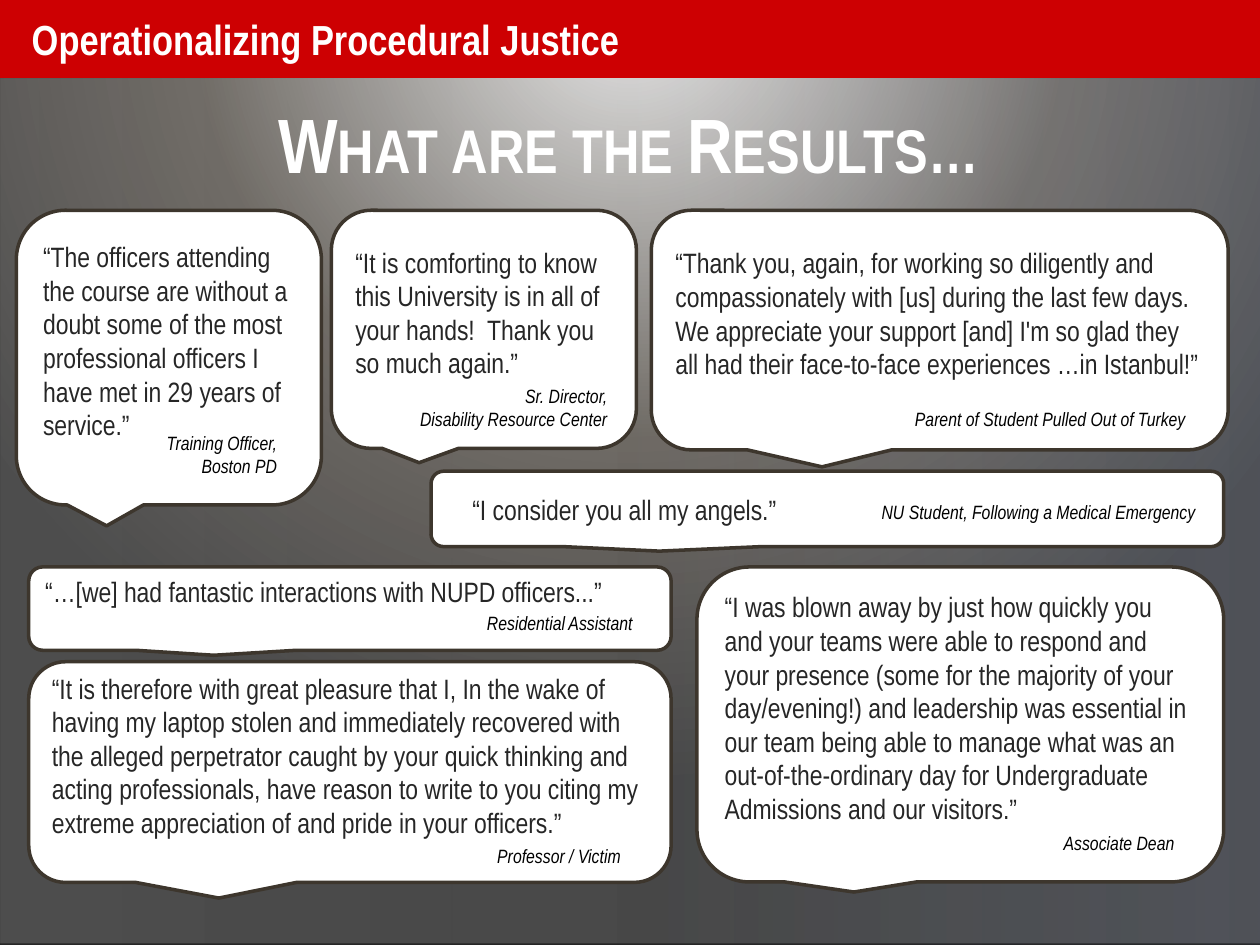
from lxml import etree
from pptx import Presentation
from pptx.dml.color import RGBColor
from pptx.enum.shapes import MSO_SHAPE
from pptx.enum.text import MSO_ANCHOR, MSO_AUTO_SIZE, PP_ALIGN
from pptx.oxml import parse_xml
from pptx.util import Cm, Pt

RECT, CALLOUT = MSO_SHAPE.RECTANGLE, MSO_SHAPE.ROUNDED_RECTANGULAR_CALLOUT
MIDDLE, TOP = MSO_ANCHOR.MIDDLE, MSO_ANCHOR.TOP
LEFT, CENTER, RIGHT = PP_ALIGN.LEFT, PP_ALIGN.CENTER, PP_ALIGN.RIGHT
FIT_SHAPE = MSO_AUTO_SIZE.SHAPE_TO_FIT_TEXT
A = "http://schemas.openxmlformats.org/drawingml/2006/main"
P = "http://schemas.openxmlformats.org/presentationml/2006/main"

FONT = "Arial Narrow"
WHITE, BLACK, RED = "FFFFFF", "000000", "CD0002"
BROWN, DARK = "3D362D", "262626"
SLIDE_W, SLIDE_H, HEADER_H = 25.4, 19.05, 1.57

# Callout tails, as offsets of the tip from the centre
LONG_TAIL = (-0.204, 0.571, 0.167)
MID_TAIL = (-0.212, 0.56, 0.167)
SHORT_TAIL = (-0.202, 0.532, 0.167)
ONE_LINE, TWO_LINES = 0.74, 1.19
RAISED = {"margin_bottom": Cm(0.81)}  # leaves one line free below the quote

# Box, tail, quote, text frame margins, speaker, speaker's box inside the callout
QUOTES = [
    ((0.33, 4.24, 6.15, 5.94), LONG_TAIL,
     "“The officers attending the course are without a doubt some of the most "
     "professional officers I have met in 29 years of service.”",
     RAISED, "Training Officer,\vBoston PD", (2.64, 4.32, 2.87, TWO_LINES)),
    ((6.68, 4.24, 6.15, 4.8), MID_TAIL,
     "“It is comforting to know this University is in all of your hands!  "
     "Thank you so much again.”",
     RAISED, "Sr. Director,\vDisability Resource Center",
     (1.5, 3.38, 4.32, TWO_LINES)),
    ((13.13, 4.24, 11.63, 4.83), LONG_TAIL,
     "“Thank you, again, for working so diligently and compassionately with "
     "[us] during the last few days. We appreciate your support [and] I'm so "
     "glad they all had their face-to-face experiences …in Istanbul!”",
     RAISED, "Parent of Student Pulled Out of Turkey",
     (5.01, 3.84, 6.02, ONE_LINE)),
    ((14.05, 11.43, 10.62, 6.35), SHORT_TAIL,
     "“I was blown away by just how quickly you and your teams were able to "
     "respond and your presence (some for the majority of your day/evening!) "
     "and leadership was essential in our team being able to manage what was "
     "an out-of-the-ordinary day for Undergraduate Admissions and our visitors.”",
     RAISED, "Associate Dean", (7.11, 5.21, 2.77, ONE_LINE)),
    ((0.58, 11.43, 12.95, 1.68), MID_TAIL,
     "“…[we] had fantastic interactions with NUPD officers...”",
     RAISED, "Residential Assistant", (8.95, 0.76, 3.48, ONE_LINE)),
    ((0.58, 13.34, 12.95, 4.45), LONG_TAIL,
     "“It is therefore with great pleasure that I, In the wake of having my "
     "laptop stolen and immediately recovered with the alleged perpetrator "
     "caught by your quick thinking and acting professionals, have reason to "
     "write to you citing my extreme appreciation of and pride in your officers.”",
     RAISED, "Professor / Victim", (9.17, 3.55, 3.02, ONE_LINE)),
    ((8.69, 9.5, 15.98, 1.52), MID_TAIL,
     "“I consider you all my angels.”", {"margin_left": Cm(0.76)},
     "NU Student, Following a Medical Emergency", (8.79, 0.46, 6.88, ONE_LINE)),
]


def rgb(value):
    return RGBColor.from_string(value)


def gradient(stops, direction):
    """Build a gradient fill from (position, colour, opacity) in percent."""
    marks = "".join(
        f'<a:gs pos="{pos * 1000}"><a:srgbClr val="{color}">'
        f'<a:alpha val="{opacity * 1000}"/></a:srgbClr></a:gs>'
        for pos, color, opacity in stops)
    return (f'<a:gradFill xmlns:a="{A}" rotWithShape="1">'
            f'<a:gsLst>{marks}</a:gsLst>{direction}</a:gradFill>')


def add_shape(slide, kind, box, fill=None, line=None):
    s = slide.shapes.add_shape(kind, *map(Cm, box))
    s.shadow.inherit = False
    if fill:
        s.fill.solid()
        s.fill.fore_color.rgb = rgb(fill)
    if line:
        s.line.color.rgb = rgb(line)
        s.line.width = Pt(2)
    else:
        s.line.fill.background()
    return s


def write(s, text, color, font, align=LEFT, **frame):
    """Fill a shape with one paragraph and return its run properties."""
    tf = s.text_frame
    for name, value in {"word_wrap": True, "vertical_anchor": MIDDLE, **frame}.items():
        setattr(tf, name, value)
    p = tf.paragraphs[0]
    p.text, p.alignment = text, align
    for r in p.runs:
        r.font.color.rgb = rgb(color)
        for name, value in {"name": FONT, **font}.items():
            setattr(r.font, name, value)
    return p.runs[0].font


def add_background(slide):
    # Light falling from the top centre
    glow = gradient(
        [(0, WHITE, 100), (56, BROWN, 100), (100, BLACK, 100)],
        '<a:path path="circle"><a:fillToRect l="50000" t="-80000" '
        'r="50000" b="180000"/></a:path>')
    slide.element.cSld.insert(0, parse_xml(
        f'<p:bg xmlns:p="{P}"><p:bgPr>{glow}'
        f'<a:effectLst xmlns:a="{A}"/></p:bgPr></p:bg>'))
    # Translucent veil below the header
    s = add_shape(slide, RECT, (0, HEADER_H, SLIDE_W, SLIDE_H - HEADER_H))
    veil = gradient(
        [(0, "BFBFBF", 40), (50, "BFBFBF", 37), (100, "E0E9FB", 35)],
        '<a:lin ang="0" scaled="0"/>')
    s.element.spPr.find(f"{{{A}}}prstGeom").addnext(etree.fromstring(veil))


def add_header(slide, box):
    s = add_shape(slide, RECT, box, RED)
    write(s, "Operationalizing Procedural Justice", WHITE,
          {"size": Pt(24), "bold": True}, margin_left=Cm(0.64), word_wrap=False)


def add_title(slide, box):
    s = slide.shapes.add_textbox(*map(Cm, box))
    font = write(s, "What are the Results…", WHITE,
                 {"size": Pt(44), "bold": True}, CENTER)
    font._element.set("cap", "small")


def add_quote(slide, box, tail, quote, margins, speaker, speaker_box):
    # Speech bubble
    s = add_shape(slide, CALLOUT, box, WHITE, BROWN)
    for i, value in enumerate(tail):
        s.adjustments[i] = value
    write(s, quote, DARK, {"size": Pt(16)}, **margins)
    # Speaker
    x, y, w, h = speaker_box
    s = slide.shapes.add_textbox(*map(Cm, (box[0] + x, box[1] + y, w, h)))
    write(s, speaker, BLACK, {"size": Pt(11), "italic": True}, RIGHT,
          word_wrap=False, vertical_anchor=TOP, auto_size=FIT_SHAPE)


def main():
    prs = Presentation()
    prs.slide_width, prs.slide_height = Cm(SLIDE_W), Cm(SLIDE_H)
    slide = prs.slides.add_slide(prs.slide_layouts[6])
    add_background(slide)
    add_header(slide, (0, 0, SLIDE_W, HEADER_H))
    add_title(slide, (1.24, 1.7, 22.86, 2.34))
    for quote in QUOTES:
        add_quote(slide, *quote)
    prs.save("out.pptx")


if __name__ == "__main__":
    main()
